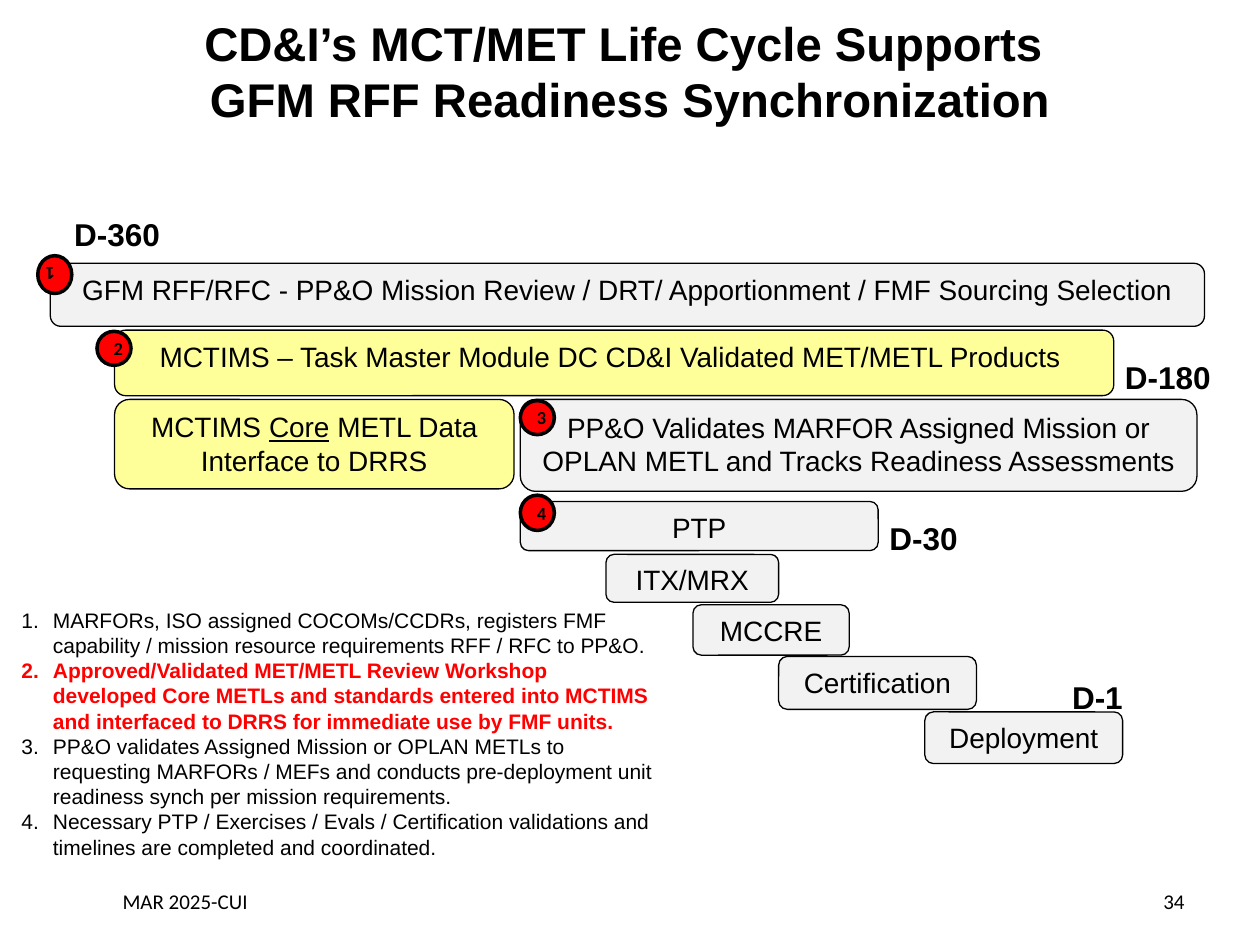
from lxml import etree
from pptx import Presentation
from pptx.dml.color import RGBColor
from pptx.enum.shapes import MSO_SHAPE
from pptx.enum.text import MSO_ANCHOR, MSO_AUTO_SIZE, PP_ALIGN
from pptx.oxml.ns import qn
from pptx.util import Inches, Pt

LEFT, CENTER, RIGHT = PP_ALIGN.LEFT, PP_ALIGN.CENTER, PP_ALIGN.RIGHT
TOP, MIDDLE = MSO_ANCHOR.TOP, MSO_ANCHOR.MIDDLE
BAR, BADGE = MSO_SHAPE.ROUNDED_RECTANGLE, MSO_SHAPE.FLOWCHART_CONNECTOR
COLORS = {"black": "000000", "gray": "F2F2F2", "yellow": "FFFF99", "red": "FF0000"}

TITLE = ["CD&I’s MCT/MET Life Cycle Supports ", "GFM RFF Readiness Synchronization"]
PHASES = [
    ((0.4, 2.09, 9.16, 0.5), "gray",
     ["GFM RFF/RFC - PP&O Mission Review / DRT/ Apportionment / FMF Sourcing Selection"]),
    ((0.91, 2.62, 7.93, 0.52), "yellow",
     ["MCTIMS – Task Master Module DC CD&I Validated MET/METL Products "]),
    ((0.91, 3.17, 3.17, 0.71), "yellow",
     ["MCTIMS ", "Core", " METL Data Interface to DRRS"]),
    ((4.13, 3.17, 5.37, 0.73), "gray",
     ["PP&O Validates MARFOR Assigned Mission or OPLAN METL and Tracks Readiness Assessments"]),
    ((4.13, 3.98, 2.84, 0.39), "gray", ["PTP"]),
    ((4.81, 4.4, 1.37, 0.38), "gray", ["ITX/MRX"]),
    ((5.5, 4.8, 1.24, 0.4), "gray", ["MCCRE"]),
    ((6.18, 5.21, 1.57, 0.42), "gray", ["Certification"]),
    ((7.34, 5.65, 1.57, 0.41), "gray", ["Deployment"]),
]
BADGES = [(0.3, 2.03, 0.27, 0.3), (0.77, 2.63, 0.27, 0.27),
          (4.13, 3.18, 0.27, 0.27), (4.13, 3.93, 0.27, 0.28)]
MILESTONES = [("D-360", (0.49, 1.66, 0.89, 0.4)), ("D-180", (8.83, 2.79, 0.89, 0.4)),
              ("D-30", (6.96, 4.07, 0.75, 0.4)), ("D-1", (8.41, 5.33, 0.61, 0.4))]
STEPS = [
    ("MARFORs, ISO assigned COCOMs/CCDRs, registers FMF capability / mission resource "
     "requirements RFF / RFC to PP&O.", False),
    ("Approved/Validated MET/METL Review Workshop developed Core METLs and standards entered "
     "into MCTIMS and interfaced to DRRS for immediate use by FMF units.", True),
    ("PP&O validates Assigned Mission or OPLAN METLs to requesting MARFORs / MEFs and conducts "
     "pre-deployment unit readiness synch per mission requirements.", False),
    ("Necessary PTP / Exercises / Evals / Certification validations and timelines are "
     "completed and coordinated.", False),
]


def inches(box):
    """Turn a box of numbers into lengths."""
    return [Inches(v) for v in box]


def place(sp, box):
    """Move a placeholder into a box."""
    sp.left, sp.top, sp.width, sp.height = inches(box)


def add_run(p, text, size, font="Arial", color="black", bold=False, underline=None):
    """Add one formatted run to a paragraph."""
    r = p.add_run()
    r.text = text
    r.font.name, r.font.size = font, Pt(size)
    r.font.bold, r.font.underline = bold, underline
    r.font.color.rgb = RGBColor.from_string(COLORS[color])


def add_title(s, box):
    """Fill the title placeholder with two centred lines."""
    place(s.shapes.title, box)
    tf = s.shapes.title.text_frame
    tf.auto_size, tf.vertical_anchor = MSO_AUTO_SIZE.NONE, MIDDLE
    for i, line in enumerate(TITLE):
        p = tf.add_paragraph() if i else tf.paragraphs[0]
        p.alignment = CENTER
        add_run(p, line, 27, bold=True)


def add_block(s, kind, box, fill, width, anchor):
    """Add an outlined, filled shape and return it."""
    sp = s.shapes.add_shape(kind, *inches(box))
    sp.shadow.inherit = False
    sp.fill.solid()
    sp.fill.fore_color.rgb = RGBColor.from_string(COLORS[fill])
    sp.line.color.rgb = RGBColor.from_string(COLORS["black"])
    sp.line.width = Pt(width)
    tf = sp.text_frame
    tf.word_wrap, tf.vertical_anchor = True, anchor
    tf.paragraphs[0].alignment = CENTER
    return sp


def add_phase(s, box, fill, parts):
    """Add a timeline bar, underlining every second part of its text."""
    sp = add_block(s, BAR, box, fill, 0.75, TOP)
    for i, part in enumerate(parts):
        add_run(sp.text_frame.paragraphs[0], part, 16, underline=True if i % 2 else None)


def add_badge(s, box, number):
    """Add a numbered red circle; the first is flipped vertically."""
    sp = add_block(s, BADGE, box, "red", 2, MIDDLE)
    add_run(sp.text_frame.paragraphs[0], str(number), 10.5, "Calibri", bold=True)
    if number == 1:
        sp._element.spPr.xfrm.set("flipV", "1")


def add_label(s, box, text, size, font="Arial", bold=False, align=LEFT, anchor=TOP, wrap=True):
    """Add a one-line text box."""
    tf = s.shapes.add_textbox(*inches(box)).text_frame
    tf.word_wrap, tf.vertical_anchor = wrap, anchor
    tf.paragraphs[0].alignment = align
    add_run(tf.paragraphs[0], text, size, font, bold=bold)


def add_steps(s, box):
    """Fill the body placeholder with the numbered steps."""
    sp = s.placeholders[1]
    place(sp, box)
    tf = sp.text_frame
    tf.auto_size, tf.vertical_anchor = MSO_AUTO_SIZE.NONE, TOP
    for i, (text, key) in enumerate(STEPS):
        p = tf.add_paragraph() if i else tf.paragraphs[0]
        pPr = p._p.get_or_add_pPr()
        pPr.set("marL", str(Inches(0.25)))
        pPr.set("indent", str(-Inches(0.25)))
        etree.SubElement(pPr, qn("a:buFont"), typeface="+mj-lt")
        etree.SubElement(pPr, qn("a:buAutoNum"), type="arabicPeriod")
        p.space_before = Pt(0)
        add_run(p, text, 12, color="red" if key else "black", bold=key)


def main():
    """Build and save the slide."""
    prs = Presentation()
    prs.slide_width, prs.slide_height = Inches(10), Inches(7.5)
    s = prs.slides.add_slide(prs.slide_layouts[1])
    add_title(s, (0, 0, 10, 1.12))
    for box, fill, parts in PHASES:
        add_phase(s, box, fill, parts)
    add_steps(s, (0.07, 4.77, 5.24, 2.12))
    for text, box in MILESTONES:
        add_label(s, box, text, 18, bold=True, wrap=False)
    for number, box in enumerate(BADGES, 1):
        add_badge(s, box, number)
    add_label(s, (0, 6.95, 2.94, 0.4), "MAR 2025-CUI", 12, "Calibri", align=CENTER, anchor=MIDDLE)
    add_label(s, (7.17, 6.95, 2.33, 0.4), "34", 12, "Calibri", align=RIGHT, anchor=MIDDLE)
    prs.save("out.pptx")


if __name__ == "__main__":
    main()
